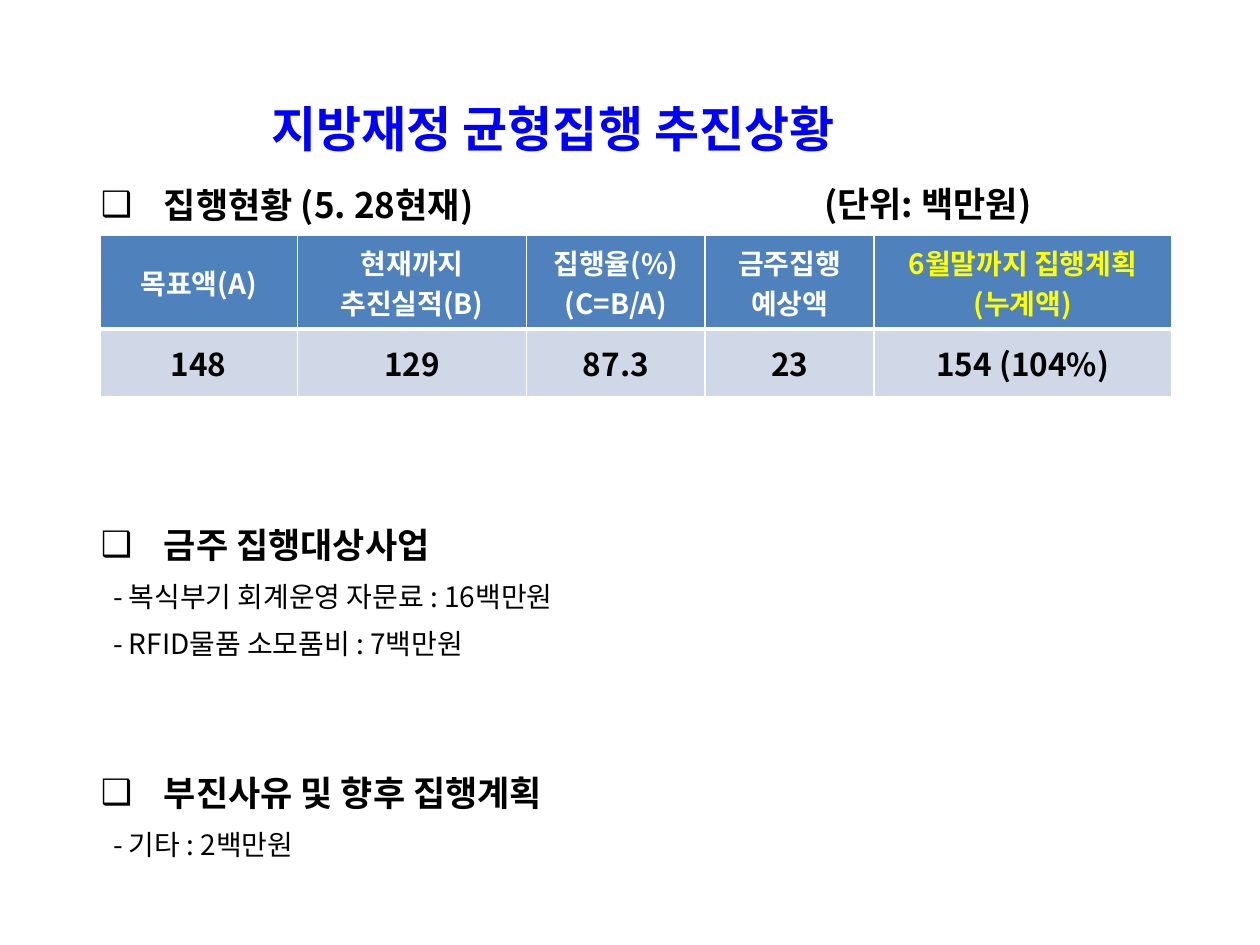
from lxml import etree
from pptx import Presentation
from pptx.dml.color import RGBColor
from pptx.enum.text import MSO_ANCHOR, MSO_AUTO_SIZE, PP_ALIGN
from pptx.oxml.ns import qn
from pptx.util import Pt

CENTER, LEFT = PP_ALIGN.CENTER, PP_ALIGN.LEFT
MIDDLE, TOP = MSO_ANCHOR.MIDDLE, MSO_ANCHOR.TOP
NO_AUTOFIT = MSO_AUTO_SIZE.NONE

FONT = "Noto Sans CJK KR"
BLACK, WHITE, BLUE, YELLOW = "000000", "FFFFFF", "0000FF", "FFFF00"
HEADER_FILL, VALUE_FILL = "4F81BD", "D0D8E8"
HEADING_LINE, ITEM_LINE = 30, 27

SECTIONS = [
    # heading, space before, items
    ("집행현황 (5. 28현재)", 0, []),
    ("금주 집행대상사업", 164.5,
     ["- 복식부기 회계운영 자문료 : 16백만원", "- RFID물품 소모품비 : 7백만원"]),
    ("부진사유 및 향후 집행계획", 58, ["- 기타 : 2백만원"]),
]
COLUMNS = [
    # width, header, value
    (113, "목표액(A)", "148"),
    (131, "현재까지\n추진실적(B)", "129"),
    (102, "집행율(%)\n(C=B/A)", "87.3"),
    (96.5, "금주집행\n예상액", "23"),
    (170, "6월말까지 집행계획\n(누계액)", "154 (104%)"),
]
ROW_HEIGHTS = (53.5, 38.5)


def rgb(color):
    return RGBColor.from_string(color)


def style(p, size, color, bold=True, align=LEFT):
    p.alignment = align
    for r in p.runs:
        r.font.size, r.font.bold, r.font.name = Pt(size), bold, FONT
        r.font.color.rgb = rgb(color)
        etree.SubElement(r.font._element, qn("a:ea"), typeface=FONT)


def set_spacing(p, line, before=0):
    p.line_spacing, p.space_before, p.space_after = Pt(line), Pt(before), Pt(0)


def set_bullet(p, char, margin, indent):
    """Set the bullet and indents; call after spacing to keep the XML order."""
    pPr = p._p.get_or_add_pPr()
    pPr.set("marL", str(Pt(margin)))
    pPr.set("indent", str(Pt(indent)))
    if char:
        etree.SubElement(pPr, qn("a:buChar"), char=char)
    else:
        etree.SubElement(pPr, qn("a:buNone"))


def place(sp, left, top, width, height):
    sp.left, sp.top, sp.width, sp.height = map(Pt, (left, top, width, height))
    sp.text_frame.word_wrap = True
    sp.text_frame.auto_size = NO_AUTOFIT


def add_title(slide, left, top, width, height):
    sp = slide.shapes.title
    place(sp, left, top, width, height)
    sp.text_frame.text = "지방재정 균형집행 추진상황"
    sp.text_frame.vertical_anchor = MIDDLE
    style(sp.text_frame.paragraphs[0], 28, BLUE, align=CENTER)


def add_sections(slide, left, top, width, height):
    sp = slide.placeholders[1]
    place(sp, left, top, width, height)
    tf = sp.text_frame
    tf.vertical_anchor = TOP
    p = tf.paragraphs[0]
    for i, (heading, before, items) in enumerate(SECTIONS):
        if i:
            p = tf.add_paragraph()
        p.text = heading
        style(p, 20, BLACK)
        set_spacing(p, HEADING_LINE, before)
        set_bullet(p, "❑", 36, -36)
        for item in items:
            p = tf.add_paragraph()
            p.text = item
            style(p, 16, BLACK, bold=False)
            set_spacing(p, ITEM_LINE)
            set_bullet(p, None, 7, 0)


def add_unit(slide, left, top, width, height):
    sp = slide.shapes.add_textbox(0, 0, 0, 0)
    place(sp, left, top, width, height)
    tf = sp.text_frame
    tf.margin_left = tf.margin_right = 0
    tf.text = "(단위: 백만원)"
    style(tf.paragraphs[0], 20, BLACK)
    set_spacing(tf.paragraphs[0], HEADING_LINE)


def set_borders(cell, top, bottom):
    tcPr = cell._tc.get_or_add_tcPr()
    for side, width in (("L", 1), ("R", 1), ("T", top), ("B", bottom)):
        ln = etree.SubElement(tcPr, qn(f"a:ln{side}"), w=str(Pt(width)))
        fill = etree.SubElement(ln, qn("a:solidFill"))
        etree.SubElement(fill, qn("a:srgbClr"), val=WHITE)


def fill_cell(cell, text, size, color, fill, borders):
    set_borders(cell, *borders)
    cell.fill.solid()
    cell.fill.fore_color.rgb = rgb(fill)
    cell.vertical_anchor = MIDDLE
    cell.text_frame.text = text
    for p in cell.text_frame.paragraphs:
        style(p, size, color, align=CENTER)


def add_status_table(slide, left, top, width, height):
    table = slide.shapes.add_table(
        2, len(COLUMNS), Pt(left), Pt(top), Pt(width), Pt(height)).table
    for row, row_height in zip(table.rows, ROW_HEIGHTS):
        row.height = Pt(row_height)
    last = len(COLUMNS) - 1
    for i, (col_width, header, value) in enumerate(COLUMNS):
        table.columns[i].width = Pt(col_width)
        color = YELLOW if i == last else WHITE
        fill_cell(table.cell(0, i), header, 16, color, HEADER_FILL, (1, 3))
        fill_cell(table.cell(1, i), value, 18, BLACK, VALUE_FILL, (3, 1))


def main():
    prs = Presentation()
    prs.slide_width, prs.slide_height = Pt(720), Pt(540)
    slide = prs.slides.add_slide(prs.slide_layouts[1])
    add_title(slide, 116, 48, 400, 50)
    add_sections(slide, 50.4, 95, 620, 410)
    add_unit(slide, 471, 95, 150, 38)
    add_status_table(slide, 57, 134.5, sum(c[0] for c in COLUMNS), sum(ROW_HEIGHTS))
    prs.save("out.pptx")


if __name__ == "__main__":
    main()
